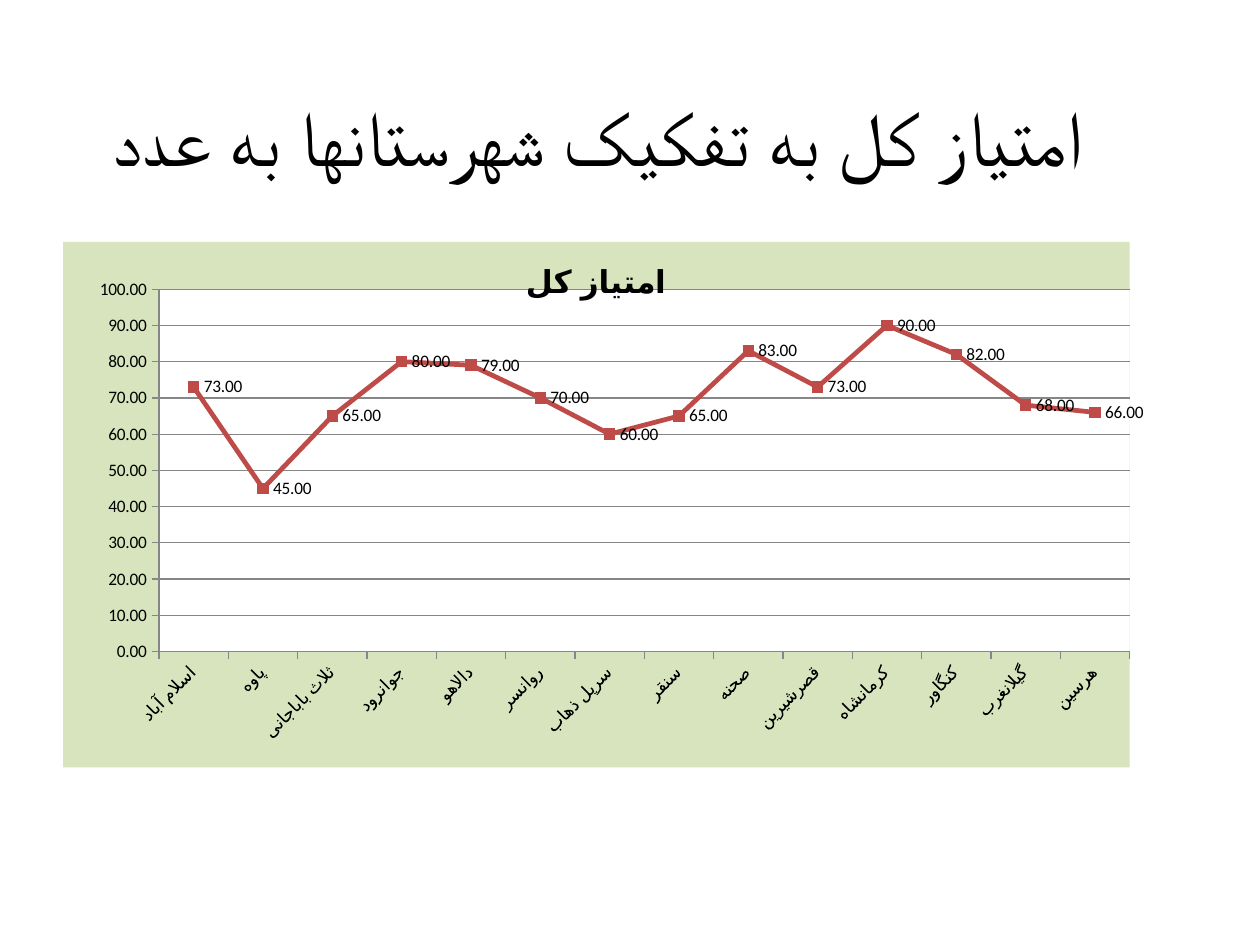
import dataclasses

import pptx
import pptx.chart.data
import pptx.dml.color
import pptx.enum.chart
import pptx.enum.text
import pptx.oxml
import pptx.oxml.ns
import pptx.util

Inches = pptx.util.Inches
Pt = pptx.util.Pt
FONT = "Calibri"
COLORS = {"text": "000000", "panel": "D7E4BD", "plot": "FFFFFF", "score": "BE4B48", "axis": "868686"}


@dataclasses.dataclass
class CountyScore:
    """Total score of one county."""
    county: str
    score: float


SCORES = [
    CountyScore("اسلام آباد", 73),
    CountyScore("پاوه", 45),
    CountyScore("ثلاث باباجانی", 65),
    CountyScore("جوانرود", 80),
    CountyScore("دالاهو", 79),
    CountyScore("روانسر", 70),
    CountyScore("سرپل ذهاب", 60),
    CountyScore("سنقر", 65),
    CountyScore("صحنه", 83),
    CountyScore("قصرشیرین", 73),
    CountyScore("کرمانشاه", 90),
    CountyScore("کنگاور", 82),
    CountyScore("گیلانغرب", 68),
    CountyScore("هرسین", 66),
]


def rgb(name: str) -> pptx.dml.color.RGBColor:
    """Look up a named colour."""
    return pptx.dml.color.RGBColor.from_string(COLORS[name])


def style_font(font, size: float, bold: bool = False) -> None:
    """Apply the common typeface and colour."""
    font.name = FONT
    font.size = Pt(size)
    font.bold = bold
    font.color.rgb = rgb("text")


def add_heading(slide, text: str) -> None:
    """Add the right-to-left slide heading."""
    heading = slide.shapes.add_textbox(Inches(0.5), Inches(0.58), Inches(8.75), Inches(1))
    frame = heading.text_frame
    frame.word_wrap = True
    frame.vertical_anchor = pptx.enum.text.MSO_ANCHOR.MIDDLE
    frame.text = text
    paragraph = frame.paragraphs[0]
    paragraph.alignment = pptx.enum.text.PP_ALIGN.CENTER
    properties = paragraph._p.get_or_add_pPr()
    properties.set("rtl", "1")
    properties.set("indent", str(Inches(0.28)))
    style_font(paragraph.runs[0].font, 44)


def area_properties(color: str):
    """Build a solid, borderless area format for a chart part."""
    return pptx.oxml.parse_xml(
        f'<c:spPr {pptx.oxml.ns.nsdecls("c", "a")}><a:solidFill><a:srgbClr val="{COLORS[color]}"/>'
        "</a:solidFill><a:ln><a:noFill/></a:ln></c:spPr>"
    )


def plot_layout(x: float, y: float, width: float, height: float):
    """Build the manual layout of the inner plot area."""
    places = {"x": x, "y": y, "w": width, "h": height}
    values = "".join(f'<c:{key} val="{value}"/>' for key, value in places.items())
    return pptx.oxml.parse_xml(
        f'<c:layout {pptx.oxml.ns.nsdecls("c")}><c:manualLayout><c:layoutTarget val="inner"/>'
        f'<c:xMode val="edge"/><c:yMode val="edge"/>{values}</c:manualLayout></c:layout>'
    )


def style_areas(chart) -> None:
    """Fill the chart panel and place the plot area."""
    qn = pptx.oxml.ns.qn
    chart_space = chart._chartSpace
    chart_space.find(qn("c:chart")).addnext(area_properties("panel"))
    plot_area = chart_space.chart.plotArea
    for layout in plot_area.findall(qn("c:layout")):
        plot_area.remove(layout)
    plot_area.insert(0, plot_layout(0.09, 0.09, 0.91, 0.69))
    plot_area.append(area_properties("plot"))


def style_axes(chart) -> None:
    """Format both axes and the gridlines."""
    for axis in (chart.category_axis, chart.value_axis):
        axis.major_tick_mark = pptx.enum.chart.XL_TICK_MARK.OUTSIDE
        axis.minor_tick_mark = pptx.enum.chart.XL_TICK_MARK.NONE
        axis.format.line.color.rgb = rgb("axis")
        axis.format.line.width = Pt(0.75)
        style_font(axis.tick_labels.font, 10)
    chart.category_axis._element.txPr.bodyPr.set("rot", "-2700000")
    scale = chart.value_axis
    scale.minimum_scale, scale.maximum_scale, scale.major_unit = 0, 100, 10
    scale.tick_labels.number_format = "0.00"
    scale.tick_labels.number_format_is_linked = False
    scale.has_major_gridlines = True
    scale.major_gridlines.format.line.color.rgb = rgb("axis")
    scale.major_gridlines.format.line.width = Pt(0.75)


def style_scores(plot) -> None:
    """Format the score line, its markers and its labels."""
    plot.vary_by_categories = False
    scores = plot.series[0]
    scores.smooth = False
    scores.format.line.color.rgb = rgb("score")
    scores.format.line.width = Pt(2.75)
    scores.marker.style = pptx.enum.chart.XL_MARKER_STYLE.SQUARE
    scores.marker.size = 6
    scores.marker.format.fill.solid()
    scores.marker.format.fill.fore_color.rgb = rgb("score")
    scores.marker.format.line.color.rgb = rgb("score")
    labels = scores.data_labels
    labels.show_value = True
    labels.number_format = "0.00"
    labels.number_format_is_linked = False
    labels.position = pptx.enum.chart.XL_LABEL_POSITION.RIGHT
    style_font(labels.font, 10)


def add_score_chart(slide, title: str, scores: list[CountyScore]) -> None:
    """Add the line chart of county scores."""
    data = pptx.chart.data.CategoryChartData(number_format="0.00")
    data.categories = [entry.county for entry in scores]
    data.add_series("Series 1", [entry.score for entry in scores])
    chart = slide.shapes.add_chart(
        pptx.enum.chart.XL_CHART_TYPE.LINE_MARKERS,
        Inches(0.5), Inches(1.92), Inches(8.58), Inches(4.17), data,
    ).chart
    style_font(chart.font, 10)
    chart.has_legend = False
    chart.has_title = True
    chart.chart_title.text_frame.text = title
    style_font(chart.chart_title.text_frame.paragraphs[0].runs[0].font, 18, bold=True)
    chart.chart_title.include_in_layout = False
    style_axes(chart)
    style_scores(chart.plots[0])
    style_areas(chart)


def main() -> None:
    """Build and save the county score slide."""
    deck = pptx.Presentation()
    deck.slide_width, deck.slide_height = Inches(10), Inches(7.5)
    slide = deck.slides.add_slide(deck.slide_layouts[6])
    add_heading(slide, "امتیاز کل به تفکیک شهرستانها به عدد")
    add_score_chart(slide, "امتیاز کل", SCORES)
    deck.save("out.pptx")


if __name__ == "__main__":
    main()
